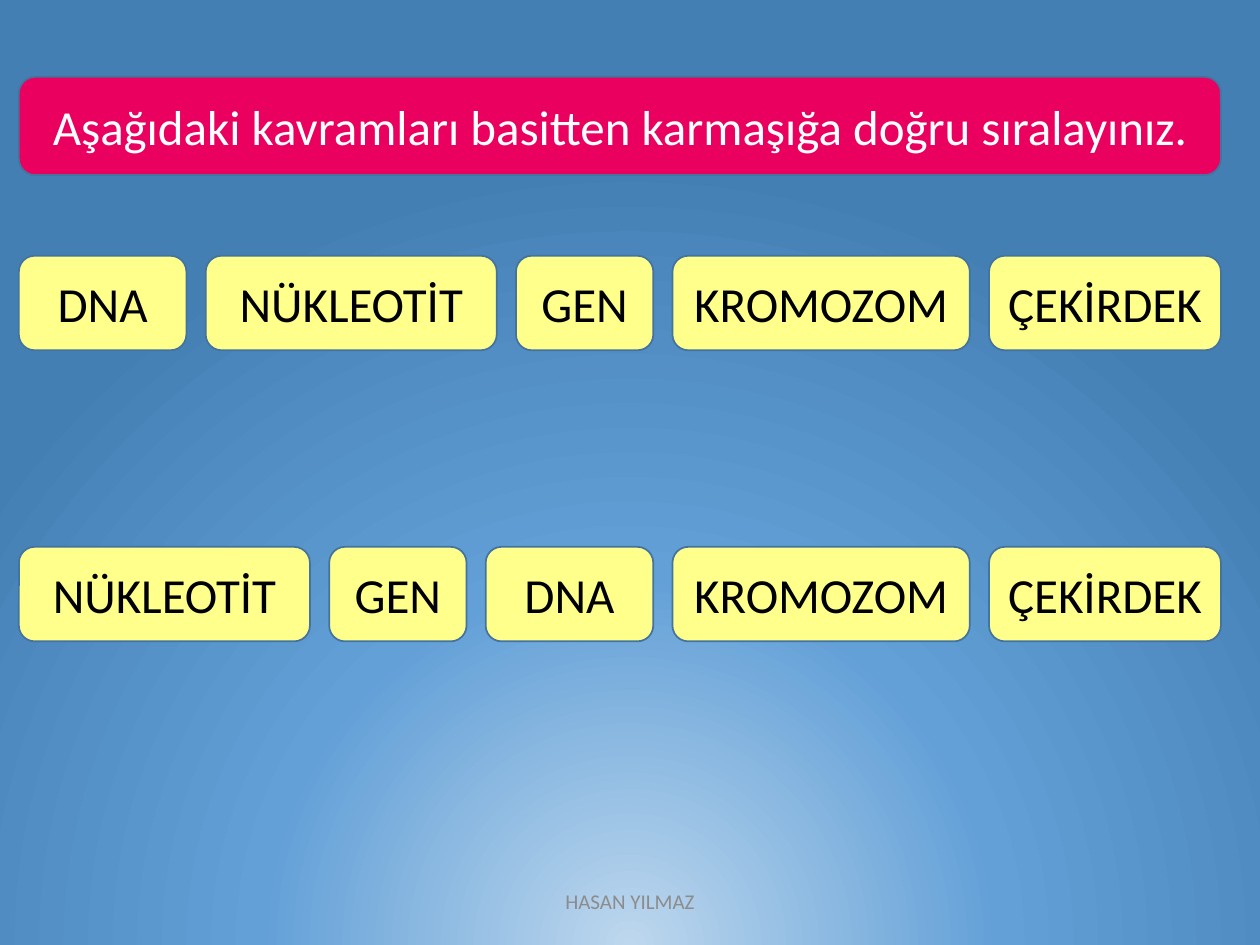
from dataclasses import dataclass

from lxml.etree import SubElement
from pptx import Presentation
from pptx.dml.color import RGBColor
from pptx.enum.shapes import MSO_SHAPE
from pptx.enum.text import MSO_ANCHOR, PP_ALIGN
from pptx.oxml.ns import qn
from pptx.util import Inches, Pt


@dataclass(frozen=True)
class Theme:
    font: str = "Calibri"
    body_size: int = 28
    footer_size: int = 12
    line_width: int = 1
    question_fill: str = "EA005F"
    question_text: str = "FFFFFF"
    card_fill: str = "FFFF8B"
    card_text: str = "000000"
    outline: str = "43739E"
    footer_text: str = "8C8C8C"
    background: tuple = ((0, "BDD7EE", 62), (47, "63A0D7", 100), (100, "447FB4", 100))
    background_focus: tuple = (("l", 50), ("t", 130), ("r", 50), ("b", -30))


CARD_WIDTHS = {"DNA": 1.33, "NÜKLEOTİT": 2.31, "GEN": 1.09, "KROMOZOM": 2.36, "ÇEKİRDEK": 1.84}
MIXED_ORDER = ("DNA", "NÜKLEOTİT", "GEN", "KROMOZOM", "ÇEKİRDEK")
SORTED_ORDER = ("NÜKLEOTİT", "GEN", "DNA", "KROMOZOM", "ÇEKİRDEK")
LEFT, CONTENT_WIDTH, CARD_HEIGHT = 0.15, 9.54, 0.75


class SlideBuilder:
    """Draws themed elements on the current slide."""

    def __init__(self, slide, theme):
        self.slide = slide
        self.theme = theme

    def background(self):
        fill = self.slide.background.fill
        fill.gradient()
        gradient = next(self.slide.element.iter(qn("a:gradFill")))
        for child in list(gradient):
            gradient.remove(child)
        stops = SubElement(gradient, qn("a:gsLst"))
        for position, color, opacity in self.theme.background:
            stop = SubElement(stops, qn("a:gs"), pos=str(position * 1000))
            shade = SubElement(stop, qn("a:srgbClr"), val=color)
            if opacity < 100:
                SubElement(shade, qn("a:alpha"), val=str(opacity * 1000))
        circle = SubElement(gradient, qn("a:path"))
        circle.set("path", "circle")
        focus = SubElement(circle, qn("a:fillToRect"))
        for side, percent in self.theme.background_focus:
            focus.set(side, str(percent * 1000))

    def label(self, shape, text, size, color):
        frame = shape.text_frame
        frame.word_wrap = True
        frame.vertical_anchor = MSO_ANCHOR.MIDDLE
        paragraph = frame.paragraphs[0]
        paragraph.alignment = PP_ALIGN.CENTER
        run = paragraph.add_run()
        run.text = text
        run.font.color.rgb = RGBColor.from_string(color)
        for name, value in {"name": self.theme.font, "size": Pt(size)}.items():
            setattr(run.font, name, value)

    def box(self, text, left, top, width, height, fill, color):
        bounds = map(Inches, (left, top, width, height))
        shape = self.slide.shapes.add_shape(MSO_SHAPE.ROUNDED_RECTANGLE, *bounds)
        shape.shadow.inherit = False
        shape.fill.solid()
        shape.fill.fore_color.rgb = RGBColor.from_string(fill)
        shape.line.color.rgb = RGBColor.from_string(self.theme.outline)
        shape.line.width = Pt(self.theme.line_width)
        self.label(shape, text, self.theme.body_size, color)

    def card_row(self, words, top):
        gap = (CONTENT_WIDTH - sum(CARD_WIDTHS.values())) / (len(words) - 1)
        left = LEFT
        for word in words:
            width = CARD_WIDTHS[word]
            self.box(word, left, top, width, CARD_HEIGHT, self.theme.card_fill, self.theme.card_text)
            left += width + gap

    def footer(self, text, left, top, width, height):
        shape = self.slide.shapes.add_textbox(*map(Inches, (left, top, width, height)))
        self.label(shape, text, self.theme.footer_size, self.theme.footer_text)


def main():
    presentation = Presentation()
    presentation.slide_width, presentation.slide_height = Inches(10), Inches(7.5)
    theme = Theme()
    builder = SlideBuilder(presentation.slides.add_slide(presentation.slide_layouts[6]), theme)
    builder.background()
    builder.card_row(MIXED_ORDER, 2.03)
    question = "Aşağıdaki kavramları basitten karmaşığa doğru sıralayınız."
    builder.box(question, LEFT, 0.61, CONTENT_WIDTH, 0.78, theme.question_fill, theme.question_text)
    builder.card_row(SORTED_ORDER, 4.34)
    builder.footer("HASAN YILMAZ", 3.31, 6.95, 3.38, 0.4)
    presentation.save("out.pptx")


if __name__ == "__main__":
    main()
